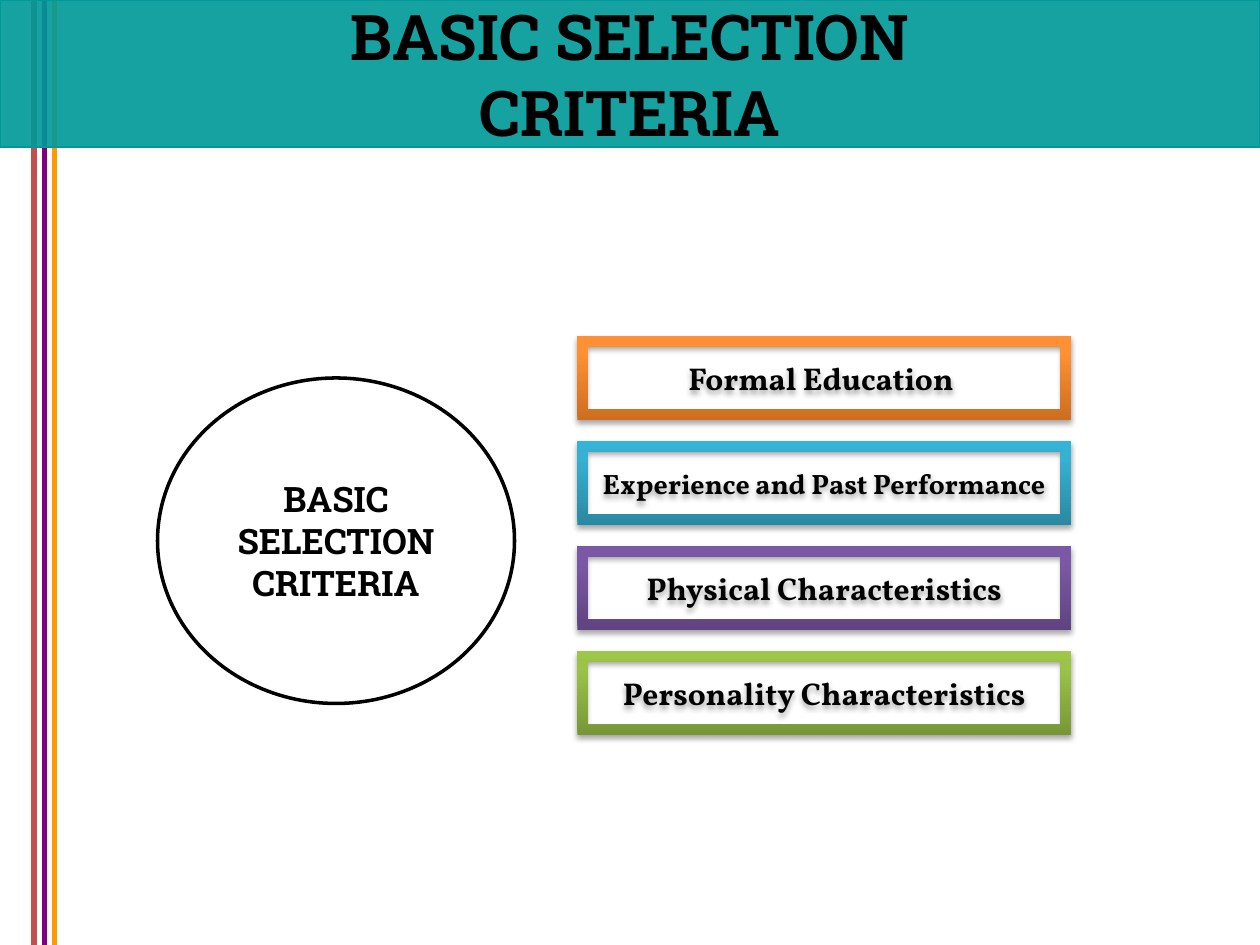
import lxml.etree
import pptx
import pptx.dml.color
import pptx.enum.shapes
import pptx.enum.text
import pptx.oxml
import pptx.oxml.ns
import pptx.util

Pt = pptx.util.Pt
RGBColor = pptx.dml.color.RGBColor
SHAPE = pptx.enum.shapes.MSO_SHAPE
qn = pptx.oxml.ns.qn

BLACK = RGBColor(0x00, 0x00, 0x00)
WHITE = RGBColor(0xFF, 0xFF, 0xFF)
TEAL = RGBColor(0x00, 0x99, 0x99)
RED = RGBColor(0xC0, 0x50, 0x4D)
PURPLE = RGBColor(0x80, 0x00, 0x80)
AMBER = RGBColor(0xFF, 0x99, 0x00)
ORANGE_SHADES = (RGBColor(0xCC, 0x6E, 0x20), RGBColor(0xFF, 0x90, 0x34), RGBColor(0xFF, 0x91, 0x36))
BLUE_SHADES = (RGBColor(0x2A, 0x88, 0xA2), RGBColor(0x37, 0xB1, 0xD2), RGBColor(0x34, 0xB4, 0xD6))
VIOLET_SHADES = (RGBColor(0x5F, 0x44, 0x80), RGBColor(0x7B, 0x58, 0xA6), RGBColor(0x7C, 0x57, 0xA8))
GREEN_SHADES = (RGBColor(0x77, 0x97, 0x37), RGBColor(0x9B, 0xC3, 0x48), RGBColor(0x9D, 0xC7, 0x46))

HEADING_FONT = "Roboto Slab"
LABEL_FONT = "Vollkorn"
PAGE_WIDTH, PAGE_HEIGHT = 720, 540

CRITERIA = [
    ("Formal Education ", 18, ORANGE_SHADES),
    ("Experience and Past Performance", 16, BLUE_SHADES),
    ("Physical Characteristics", 18, VIOLET_SHADES),
    ("Personality Characteristics", 18, GREEN_SHADES),
]


def add_box(page, preset, left, top, width, height):
    box = page.shapes.add_shape(preset, Pt(left), Pt(top), Pt(width), Pt(height))
    box.shadow.inherit = False
    return box


def write_text(box, text, font_name, size, wrap=True):
    frame = box.text_frame
    frame.text = text
    frame.word_wrap = wrap
    frame.vertical_anchor = pptx.enum.text.MSO_ANCHOR.MIDDLE
    for para in frame.paragraphs:
        para.alignment = pptx.enum.text.PP_ALIGN.CENTER
        for span in para.runs:
            span.font.name = font_name
            span.font.size = Pt(size)
            span.font.bold = True
            span.font.color.rgb = BLACK


def fill_upward(box, shades):
    stops = "".join(
        f'<a:gs pos="{position * 1000}"><a:srgbClr val="{shade}"/></a:gs>'
        for position, shade in zip((0, 80, 100), shades)
    )
    gradient = pptx.oxml.parse_xml(
        f'<a:gradFill {pptx.oxml.ns.nsdecls("a")} rotWithShape="1"><a:gsLst>{stops}</a:gsLst>'
        '<a:lin ang="16200000" scaled="0"/></a:gradFill>'
    )
    box.element.spPr.find(qn("a:prstGeom")).addnext(gradient)


def drop_shadow(box):
    effects = box.element.spPr.find(qn("a:effectLst"))
    effects.append(pptx.oxml.parse_xml(
        f'<a:outerShdw {pptx.oxml.ns.nsdecls("a")} blurRad="{Pt(3.15)}" dist="{Pt(1.81)}" '
        'dir="5400000" rotWithShape="0"><a:srgbClr val="000000">'
        '<a:alpha val="35000"/></a:srgbClr></a:outerShdw>'
    ))


def add_stripes(page, left, top, width, height):
    for offset, color in ((0, RED), (width, AMBER), (width / 2, PURPLE)):
        x = Pt(left + offset)
        stripe = page.shapes.add_connector(
            pptx.enum.shapes.MSO_CONNECTOR.STRAIGHT, x, Pt(top), x, Pt(top + height))
        stripe.line.color.rgb = color
        stripe.line.width = Pt(3)
        lxml.etree.SubElement(stripe.element.spPr, qn("a:effectLst"))


def add_banner(page, left, top, width, height):
    banner = add_box(page, SHAPE.RECTANGLE, left, top, width, height)
    banner.fill.solid()
    banner.fill.fore_color.rgb = TEAL
    color = banner.element.spPr.find(qn("a:solidFill")).find(qn("a:srgbClr"))
    lxml.etree.SubElement(color, qn("a:alpha")).set("val", "91000")
    banner.line.color.rgb = TEAL
    banner.line.width = Pt(0.75)
    write_text(banner, "BASIC SELECTION\nCRITERIA", HEADING_FONT, 36, wrap=False)


def add_hub(page, left, top, width, height):
    hub = add_box(page, SHAPE.OVAL, left, top, width, height)
    hub.fill.solid()
    hub.fill.fore_color.rgb = WHITE
    hub.line.color.rgb = BLACK
    hub.line.width = Pt(2)
    write_text(hub, "BASIC SELECTION\nCRITERIA", HEADING_FONT, 20)


def add_criteria(page, left, top, width, height, gap=12):
    count = len(CRITERIA)
    row_height = (height - gap * (count - 1)) / count
    for index, (label, size, shades) in enumerate(CRITERIA):
        row_top = top + index * (row_height + gap)
        box = add_box(page, SHAPE.FRAME, left, row_top, width, row_height)
        box.line.fill.background()
        fill_upward(box, shades)
        drop_shadow(box)
        write_text(box, label, LABEL_FONT, size)


def main():
    deck = pptx.Presentation()
    deck.slide_width, deck.slide_height = Pt(PAGE_WIDTH), Pt(PAGE_HEIGHT)
    page = deck.slides.add_slide(deck.slide_layouts[6])
    add_stripes(page, 19.5, 0, 11.5, PAGE_HEIGHT)
    add_banner(page, 0, 0, PAGE_WIDTH, 84)
    add_hub(page, 90, 216, 204, 186)
    add_criteria(page, 330, 192, 282, 228)
    deck.save("out.pptx")


if __name__ == "__main__":
    main()
